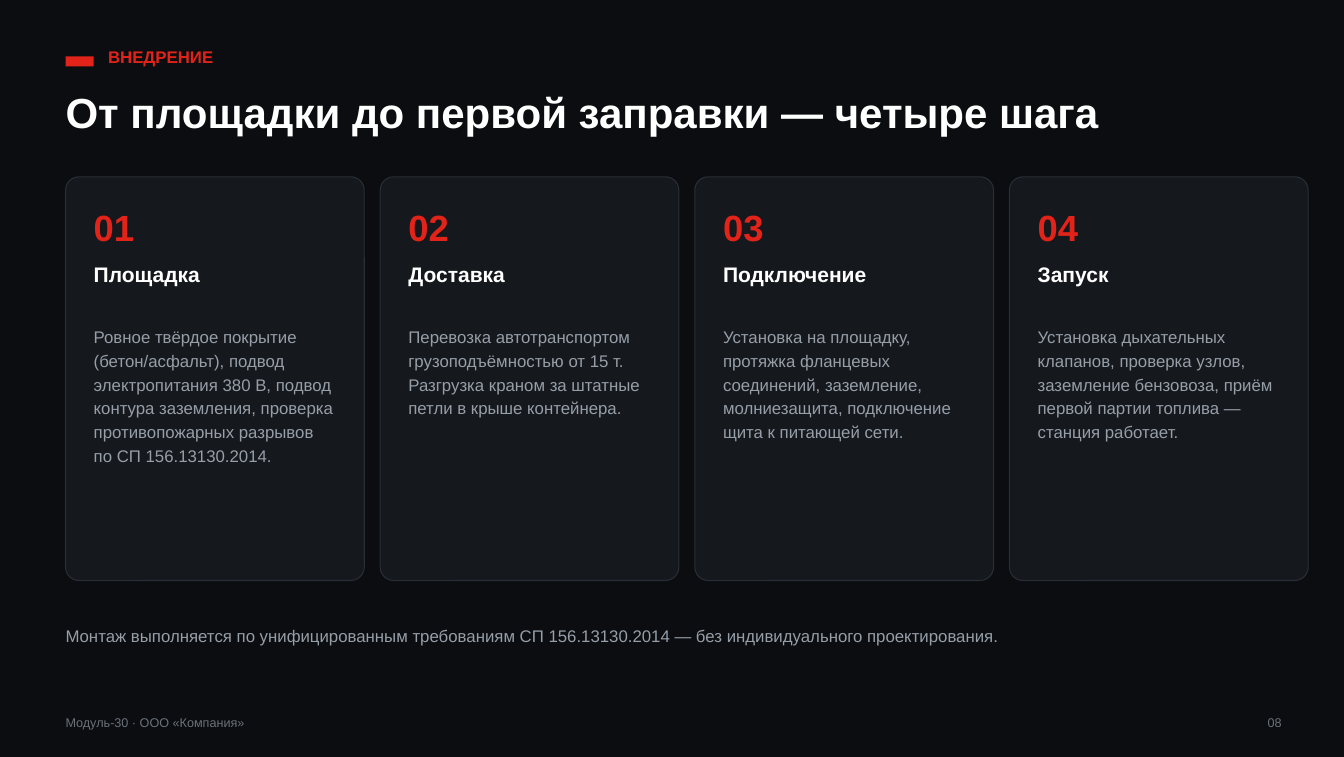
from pptx import Presentation
from pptx import util as u
from pptx.dml import color
from pptx.enum import shapes, text

RED, WHITE, GREY, DIM = "E2231A", "FFFFFF", "969EA8", "6B727B"


def paint(target, value):
    if hasattr(target, "solid"):
        target.solid()
        target = target.fore_color
    target.rgb = color.RGBColor.from_string(value)


def add_text(words, left, top, width, height, size, shade, bold=False, spacing=None, align=None):
    box = page.shapes.add_textbox(u.Cm(left), u.Cm(top), u.Cm(width), u.Cm(height))
    frame = box.text_frame
    para = frame.paragraphs[0]
    span = para.add_run()
    span.text = words
    formats = [
        (frame, {"margin_left": 0, "margin_top": 0, "margin_right": 0, "margin_bottom": 0,
                 "word_wrap": True, "auto_size": text.MSO_AUTO_SIZE.SHAPE_TO_FIT_TEXT}),
        (para, {"line_spacing": spacing, "alignment": align}),
        (span.font, {"name": "Arial", "size": u.Pt(size), "bold": bold}),
    ]
    for target, values in formats:
        for key, value in values.items():
            setattr(target, key, value)
    paint(span.font.color, shade)


deck = Presentation()
deck.slide_width, deck.slide_height = u.Cm(33.83), u.Cm(19.05)
page = deck.slides.add_slide(deck.slide_layouts[6])
paint(page.background.fill, "0B0D10")

margin = 1.65
marker = page.shapes.add_shape(
    shapes.MSO_SHAPE.RECTANGLE, u.Cm(margin), u.Cm(1.42), u.Cm(0.71), u.Cm(0.25))
marker.shadow.inherit = False
paint(marker.fill, RED)
marker.line.fill.background()

add_text("ВНЕДРЕНИЕ", 2.72, 1.17, 30.48, 0.48, 12, RED, bold=True)
add_text("От площадки до первой заправки — четыре шага", margin, 2.18, 30.48, 1.17, 30, WHITE, bold=True)

steps = [
    ("Площадка", 3.38, "Ровное твёрдое покрытие (бетон/асфальт), подвод электропитания 380 В, "
     "подвод контура заземления, проверка противопожарных разрывов по СП 156.13130.2014."),
    ("Доставка", 2.21, "Перевозка автотранспортом грузоподъёмностью от 15 т. "
     "Разгрузка краном за штатные петли в крыше контейнера."),
    ("Подключение", 2.79, "Установка на площадку, протяжка фланцевых соединений, заземление, "
     "молниезащита, подключение щита к питающей сети."),
    ("Запуск", 2.79, "Установка дыхательных клапанов, проверка узлов, заземление бензовоза, "
     "приём первой партии топлива — станция работает."),
]
card_width, gap, padding, text_width = 7.52, 0.4, 0.71, 6.1

for index, (heading, body_height, body) in enumerate(steps):
    left = margin + index * (card_width + gap)
    card = page.shapes.add_shape(
        shapes.MSO_SHAPE.ROUNDED_RECTANGLE, u.Cm(left), u.Cm(4.45), u.Cm(card_width), u.Cm(10.16))
    card.adjustments[0] = 0.045
    card.shadow.inherit = False
    paint(card.fill, "15181D")
    paint(card.line.color, "2A2F37")
    card.line.width = u.Pt(0.75)
    inner = left + padding
    add_text(f"{index + 1:02d}", inner, 5.16, text_width, 1.07, 26, RED, bold=True)
    add_text(heading, inner, 6.55, text_width, 0.58, 15, WHITE, bold=True, spacing=1.05)
    add_text(body, inner, 8.13, text_width, body_height, 12, GREY, spacing=1.18)

add_text("Монтаж выполняется по унифицированным требованиям СП 156.13130.2014 — "
         "без индивидуального проектирования.", margin, 15.75, 30.48, 0.48, 12, GREY)
add_text("Модуль-30 · ООО «Компания»", margin, 17.98, 15.24, 0.36, 9, DIM)
add_text("08", 30.99, 17.98, 1.27, 0.36, 9, DIM, align=text.PP_ALIGN.RIGHT)

deck.save("out.pptx")
